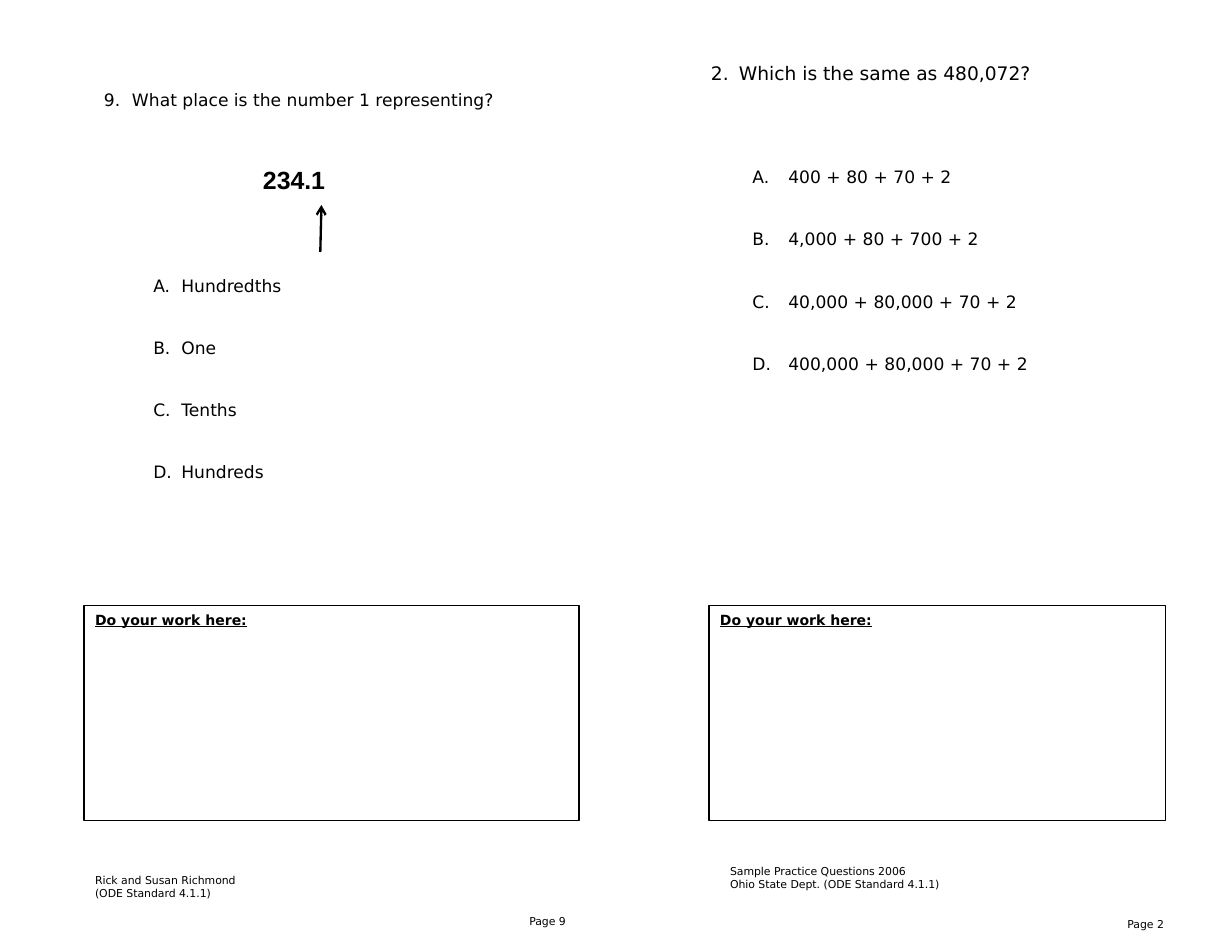
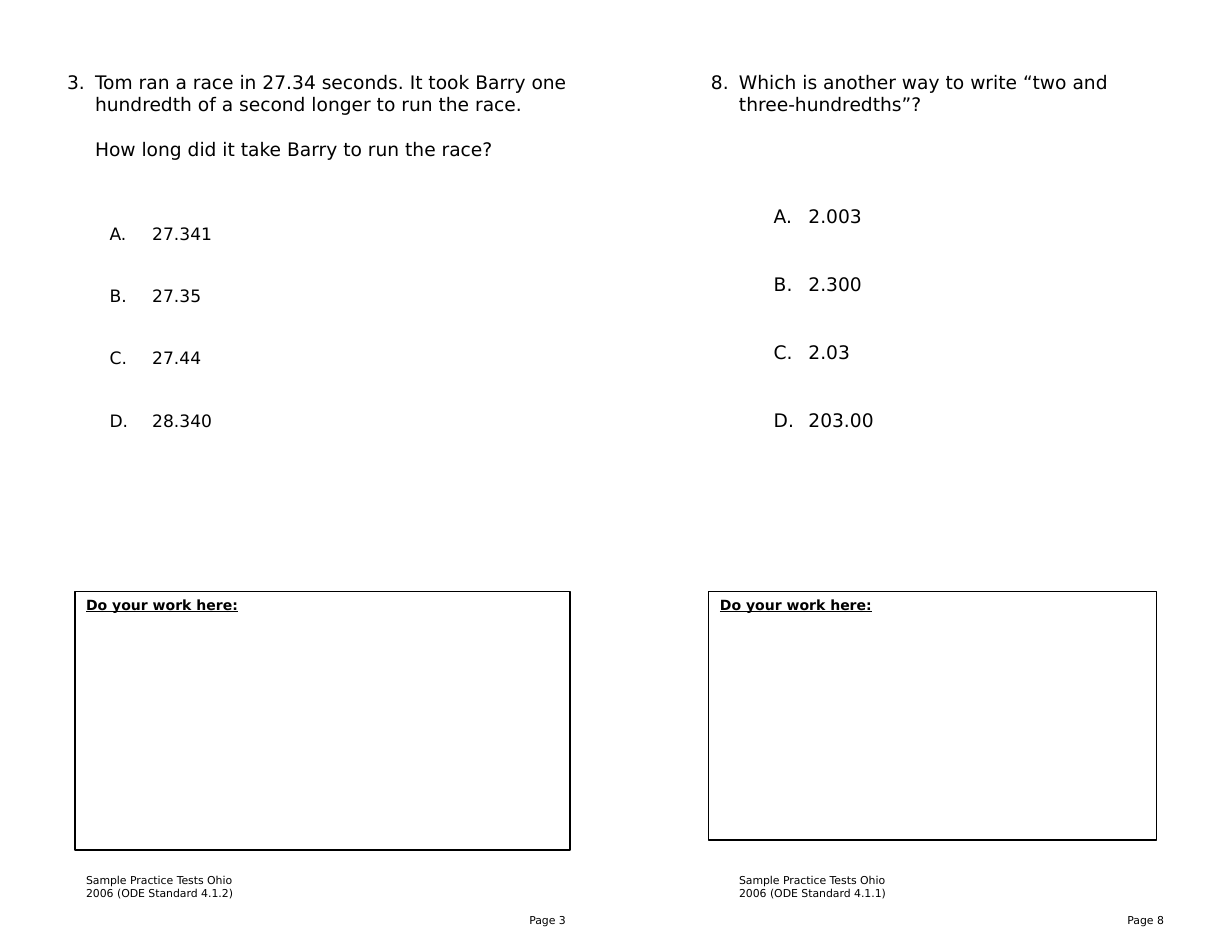
from lxml import etree
from pptx import Presentation
from pptx.dml.color import RGBColor
from pptx.enum.shapes import MSO_CONNECTOR, MSO_SHAPE
from pptx.enum.text import MSO_ANCHOR, PP_ALIGN
from pptx.oxml.ns import qn
from pptx.util import Inches, Pt

STRAIGHT = MSO_CONNECTOR.STRAIGHT
RECTANGLE = MSO_SHAPE.RECTANGLE
LEFT, RIGHT = PP_ALIGN.LEFT, PP_ALIGN.RIGHT
TOP, MIDDLE = MSO_ANCHOR.TOP, MSO_ANCHOR.MIDDLE

BLANK_LAYOUT = 6
BODY_FONT = "DejaVu Sans"
NUMBER_FONT = "Arial"
INK = "000000"
FOOTER_SIZE = 7
QUESTION_INDENT = 0.25
OPTION_GAP_RATIO = 2.44


def color(hex_string):
    return RGBColor.from_string(hex_string)


def style_font(paragraph, size, name=BODY_FONT, bold=False, underline=False):
    font = paragraph.font
    font.size = Pt(size)
    font.name = name
    font.bold = bold
    font.underline = underline
    font.color.rgb = color(INK)


def add_text_box(slide, left, top, width, height, anchor=TOP):
    shape = slide.shapes.add_textbox(
        Inches(left), Inches(top), Inches(width), Inches(height))
    frame = shape.text_frame
    frame.word_wrap = True
    frame.vertical_anchor = anchor
    return frame


def add_lines(slide, left, top, width, height, lines, align=LEFT):
    frame = add_text_box(slide, left, top, width, height)
    frame.text = "\n".join(lines)
    for paragraph in frame.paragraphs:
        paragraph.alignment = align
        style_font(paragraph, FOOTER_SIZE)


def add_page_number(slide, left, top, number):
    add_lines(slide, left, top, 0.82, 0.3, [f"Page {number}"], RIGHT)


def indent(paragraph, margin, hanging=0):
    properties = paragraph._p.get_or_add_pPr()
    properties.set("marL", str(Inches(margin)))
    properties.set("indent", str(-Inches(hanging)))
    return properties


def number_paragraph(paragraph, margin, hanging, scheme, start=1):
    properties = indent(paragraph, margin, hanging)
    numbering = etree.SubElement(properties, qn("a:buAutoNum"), type=scheme)
    if start > 1:
        numbering.set("startAt", str(start))


def add_question(slide, box, number, prompt, options, prompt_size, option_size,
                 option_indent, options_gap, follow_up=None):
    frame = add_text_box(slide, *box)
    paragraph = frame.paragraphs[0]
    paragraph.text = prompt
    number_paragraph(paragraph, QUESTION_INDENT, QUESTION_INDENT,
                     "arabicPeriod", number)
    style_font(paragraph, prompt_size)
    if follow_up:
        paragraph = frame.add_paragraph()
        paragraph.text = follow_up
        paragraph.space_before = Pt(14.6)
        indent(paragraph, QUESTION_INDENT)
        style_font(paragraph, prompt_size)
    gap = options_gap
    for option in options:
        paragraph = frame.add_paragraph()
        paragraph.text = option
        paragraph.space_before = Pt(gap)
        number_paragraph(paragraph, *option_indent, "alphaUcPeriod")
        style_font(paragraph, option_size)
        gap = option_size * OPTION_GAP_RATIO


def add_work_box(slide, left, top, width, height):
    shape = slide.shapes.add_shape(
        RECTANGLE, Inches(left), Inches(top), Inches(width), Inches(height))
    shape.shadow.inherit = False
    shape.fill.background()
    shape.line.color.rgb = color(INK)
    shape.line.width = Pt(0.75)
    frame = shape.text_frame
    frame.word_wrap = True
    frame.vertical_anchor = TOP
    paragraph = frame.paragraphs[0]
    paragraph.text = "Do your work here:"
    paragraph.alignment = LEFT
    style_font(paragraph, 9, bold=True, underline=True)


def add_place_value_number(slide):
    frame = add_text_box(slide, 2.25, 1.42, 1, 0.37, MIDDLE)
    paragraph = frame.paragraphs[0]
    paragraph.text = "234.1"
    style_font(paragraph, 16, NUMBER_FONT, bold=True)


def add_arrow(slide, start_x, start_y, end_x, end_y):
    connector = slide.shapes.add_connector(
        STRAIGHT, Inches(start_x), Inches(start_y), Inches(end_x), Inches(end_y))
    connector.line.color.rgb = color(INK)
    connector.line.width = Pt(1.5)
    etree.SubElement(connector.line._get_or_add_ln(), qn("a:tailEnd"), type="arrow")
    etree.SubElement(connector._element.spPr, qn("a:effectLst"))


def build_pages_nine_and_two(slide):
    add_question(
        slide, (0.83, 0.75, 4.42, 3.62), 9,
        "What place is the number 1 representing?",
        ["Hundredths", "One", "Tenths", "Hundreds"],
        11, 11, (0.69, 0.25), 106)
    add_place_value_number(slide)
    add_arrow(slide, 2.86, 2.25, 2.87, 1.83)
    add_work_box(slide, 0.75, 5.41, 4.42, 1.92)
    add_lines(slide, 0.75, 7.75, 1.92, 0.34,
              ["Rick and Susan Richmond", "(ODE Standard 4.1.1)"])
    add_page_number(slide, 4.33, 8.12, 9)

    add_question(
        slide, (6.25, 0.5, 4.17, 2.88), 2,
        "Which is the same as 480,072?",
        ["400 + 80 + 70 + 2", "4,000 + 80 + 700 + 2",
         "40,000 + 80,000 + 70 + 2", "400,000 + 80,000 + 70 + 2"],
        12, 11, (0.69, 0.32), 53)
    add_work_box(slide, 6.33, 5.41, 4.08, 1.92)
    add_lines(slide, 6.42, 7.67, 2.17, 0.34,
              ["Sample Practice Questions 2006",
               "Ohio State Dept. (ODE Standard 4.1.1)"])
    add_page_number(slide, 9.67, 8.14, 2)


def build_pages_three_and_eight(slide):
    add_question(
        slide, (0.5, 0.58, 4.75, 3.5), 3,
        "Tom ran a race in 27.34 seconds. It took Barry one hundredth "
        "of a second longer to run the race.",
        ["27.341", "27.35", "27.44", "28.340"],
        12, 11, (0.76, 0.38), 40.3,
        "How long did it take Barry to run the race?")
    add_work_box(slide, 0.67, 5.28, 4.42, 2.31)
    add_lines(slide, 0.67, 7.75, 1.92, 0.34,
              ["Sample Practice Tests Ohio", "2006 (ODE Standard 4.1.2)"])
    add_page_number(slide, 4.33, 8.11, 3)

    add_question(
        slide, (6.25, 0.58, 4.17, 3.33), 8,
        "Which is another way to write “two and three-hundredths”?",
        ["2.003", "2.300", "2.03", "203.00"],
        12, 12, (0.87, 0.31), 57.7)
    add_work_box(slide, 6.33, 5.28, 4, 2.22)
    add_lines(slide, 6.5, 7.75, 1.92, 0.34,
              ["Sample Practice Tests Ohio", "2006 (ODE Standard 4.1.1)"])
    add_page_number(slide, 9.67, 8.11, 8)


def main():
    presentation = Presentation()
    presentation.slide_width = Inches(11)
    presentation.slide_height = Inches(8.5)
    layout = presentation.slide_layouts[BLANK_LAYOUT]
    for build in (build_pages_nine_and_two, build_pages_three_and_eight):
        build(presentation.slides.add_slide(layout))
    presentation.save("out.pptx")


if __name__ == "__main__":
    main()
